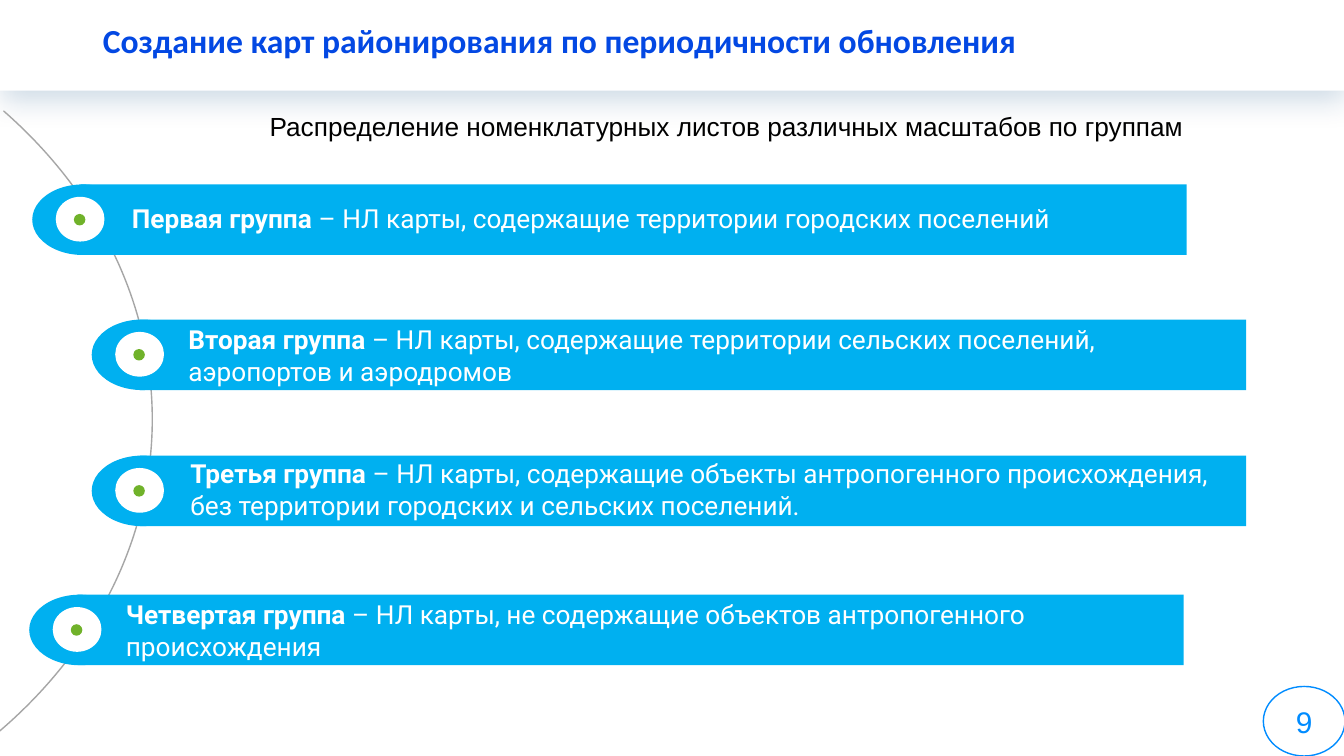
from dataclasses import dataclass

from lxml.etree import SubElement
from pptx import Presentation
from pptx.dml.color import RGBColor
from pptx.enum.shapes import MSO_SHAPE
from pptx.enum.text import MSO_ANCHOR, PP_ALIGN
from pptx.oxml.ns import qn
from pptx.util import Inches, Pt


@dataclass(frozen=True)
class Theme:
    white: str = "FFFFFF"
    black: str = "000000"
    title_blue: str = "0348E3"
    bar_blue: str = "00B0F0"
    badge_blue: str = "008CFF"
    dot_green: str = "70B22A"
    arc_gray: str = "A6A6A6"
    shadow_blue: str = "00457F"
    title_font: str = "Calibri"
    caption_font: str = "Arial"
    group_font: str = "Roboto"
    title_size: float = 24
    text_size: float = 18.7
    badge_size: float = 21.3


@dataclass(frozen=True)
class Group:
    name: str
    description: str
    left: float
    top: float
    text_left: float
    text_top: float
    text_width: float = 10.48
    text_height: float = 0.73


GROUPS = [
    Group("Первая группа", " – НЛ карты, содержащие территории городских поселений",
          0.32, 1.83, 1.21, 1.96, 9.69, 0.42),
    Group("Вторая группа ", "– НЛ карты, содержащие территории сельских поселений, "
          "аэропортов и аэродромов", 0.91, 3.17, 1.77, 3.16),
    Group("Третья группа ", "– НЛ карты, содержащие объекты антропогенного происхождения, "
          "без территории городских и сельских поселений.", 0.91, 4.52, 1.79, 4.49),
    Group("Четвертая группа ", "– НЛ карты, не содержащие объектов антропогенного "
          "происхождения", 0.29, 5.9, 1.15, 5.89),
]


class SlideBuilder:
    def __init__(self, page, theme):
        self.page = page
        self.theme = theme

    def style(self, font, name, size, color, bold=None):
        font.name = name
        font.size = Pt(size)
        font.color.rgb = RGBColor.from_string(color)
        font.bold = bold

    def shape(self, kind, left, top, width, height, fill=None, line=None):
        shape = self.page.shapes.add_shape(
            kind, Inches(left), Inches(top), Inches(width), Inches(height))
        shape.shadow.inherit = False
        if fill:
            shape.fill.solid()
            shape.fill.fore_color.rgb = RGBColor.from_string(fill)
        else:
            shape.fill.background()
        if line:
            shape.line.color.rgb = RGBColor.from_string(line)
            shape.line.width = Pt(1)
        else:
            shape.line.fill.background()
        return shape

    def text_box(self, left, top, width, height):
        box = self.page.shapes.add_textbox(
            Inches(left), Inches(top), Inches(width), Inches(height))
        box.text_frame.word_wrap = True
        return box.text_frame.paragraphs[0]

    def title(self, text):
        title = self.page.shapes.title
        title.left, title.top = Inches(1.02), Inches(0.17)
        title.width, title.height = Inches(10.33), Inches(0.5)
        frame = title.text_frame
        frame.margin_left = frame.margin_right = frame.margin_top = frame.margin_bottom = 0
        frame.vertical_anchor = MSO_ANCHOR.MIDDLE
        frame.word_wrap = True
        frame.text = text
        para = frame.paragraphs[0]
        para.alignment = PP_ALIGN.LEFT
        para.line_spacing = 0.9
        self.style(para.font, self.theme.title_font, self.theme.title_size,
                   self.theme.title_blue, True)

    def header_band(self):
        """White band behind the title, with a soft shadow below it."""
        band = self.shape(MSO_SHAPE.RECTANGLE, 0, 0, 13.33, 0.9, self.theme.white)
        effects = band.element.spPr.find(qn("a:effectLst"))
        shadow = SubElement(effects, qn("a:outerShdw"), blurRad=str(Pt(21)),
                            dist=str(Pt(6)), dir="5400000", algn="t", rotWithShape="0")
        color = SubElement(shadow, qn("a:srgbClr"), val=self.theme.shadow_blue)
        SubElement(color, qn("a:alpha"), val="20000")
        self.page.shapes.title.element.addprevious(band.element)

    def arc(self):
        arc = self.shape(MSO_SHAPE.BLOCK_ARC, -9.38, -0.31, 10.89, 8.94,
                         line=self.theme.arc_gray)
        for index, value in enumerate((193.447, 22.915, 0)):
            arc.adjustments[index] = value

    def caption(self, text):
        para = self.text_box(2.11, 1.04, 10.19, 0.42)
        para.text = text
        para.alignment = PP_ALIGN.CENTER
        self.style(para.font, self.theme.caption_font, self.theme.text_size, self.theme.black)

    def group(self, group):
        theme, left, top = self.theme, group.left, group.top
        self.shape(MSO_SHAPE.OVAL, left, top, 1, 0.7, theme.bar_blue)
        self.shape(MSO_SHAPE.RECTANGLE, left + 0.48, top, 10.97, 0.7, theme.bar_blue)
        self.shape(MSO_SHAPE.OVAL, left + 0.24, top + 0.13, 0.47, 0.43,
                   theme.white, theme.white)
        self.shape(MSO_SHAPE.OVAL, left + 0.42, top + 0.3, 0.1, 0.1,
                   theme.dot_green, theme.dot_green)
        para = self.text_box(group.text_left, group.text_top,
                             group.text_width, group.text_height)
        self.style(para.font, theme.group_font, theme.text_size, theme.white)
        for text, bold in ((group.name, True), (group.description, False)):
            span = para.add_run()
            span.text = text
            span.font.bold = bold

    def page_badge(self, number):
        badge = self.shape(MSO_SHAPE.OVAL, 12.53, 6.81, 0.81, 0.69,
                           self.theme.white, self.theme.badge_blue)
        badge.text_frame.vertical_anchor = MSO_ANCHOR.MIDDLE
        para = badge.text_frame.paragraphs[0]
        para.text = number
        para.alignment = PP_ALIGN.CENTER
        self.style(para.font, self.theme.caption_font, self.theme.badge_size,
                   self.theme.badge_blue)


def main():
    deck = Presentation()
    deck.slide_width, deck.slide_height = Inches(13.33), Inches(7.5)
    page = deck.slides.add_slide(deck.slide_layouts.get_by_name("Title Only"))
    builder = SlideBuilder(page, Theme())
    builder.header_band()
    builder.title("Создание карт районирования по периодичности обновления")
    builder.arc()
    builder.caption("Распределение номенклатурных листов различных масштабов по группам")
    for group in GROUPS:
        builder.group(group)
    builder.page_badge("9")
    deck.save("out.pptx")


if __name__ == "__main__":
    main()
